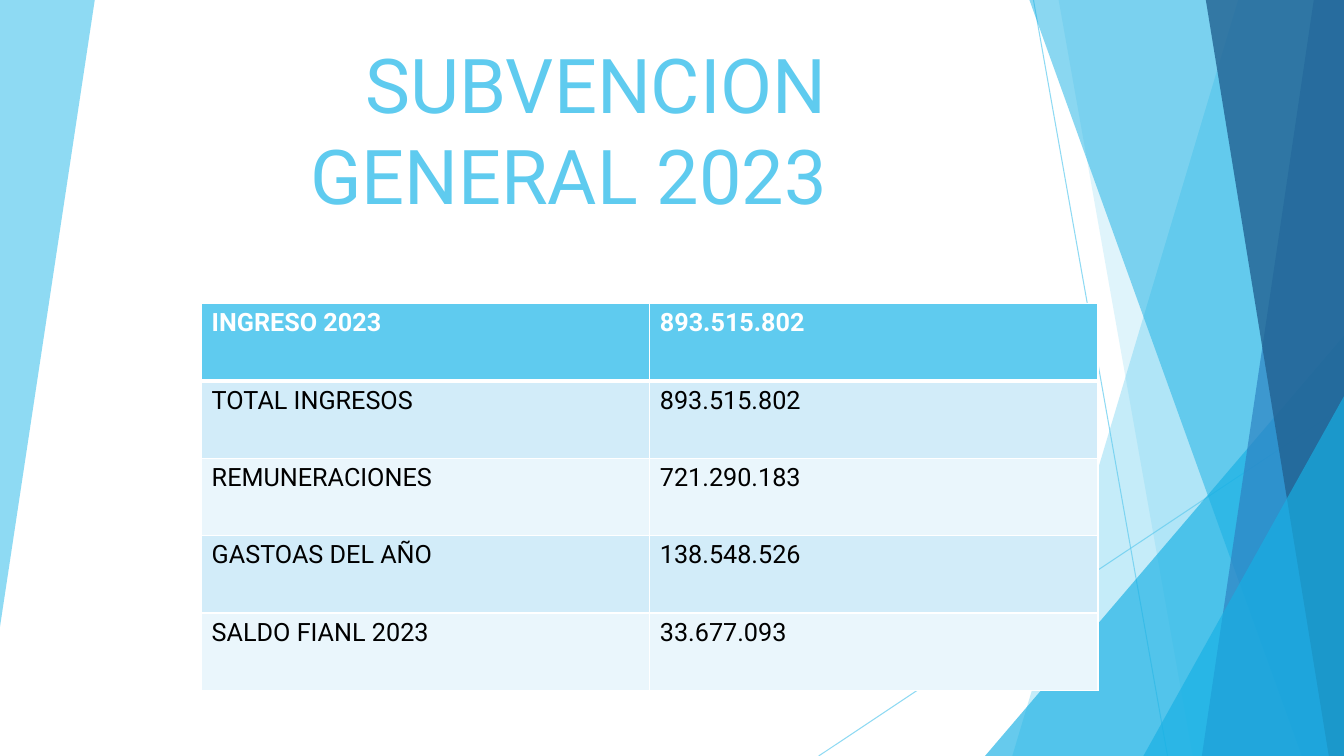
from lxml.etree import SubElement
from pptx import Presentation
from pptx.dml.color import RGBColor
from pptx.enum.shapes import MSO_CONNECTOR, MSO_SHAPE
from pptx.enum.text import MSO_ANCHOR, PP_ALIGN
from pptx.oxml.ns import qn
from pptx.util import Inches, Pt

WIDTH, HEIGHT = 13.33, 7.5
COLOURS = {
    "sky": "5FCBEF", "cyan": "17B0E4", "blue": "2E83C3", "navy": "226292",
    "band": "D2ECF9", "pale": "EAF6FC", "white": "FFFFFF", "black": "000000",
}
ROWS = [
    ("INGRESO 2023", "893.515.802"),
    ("TOTAL INGRESOS", "893.515.802"),
    ("REMUNERACIONES", "721.290.183"),
    ("GASTOAS DEL AÑO", "138.548.526"),
    ("SALDO FIANL 2023", "33.677.093"),
]


def colour(name):
    """Return the palette colour with the given name."""
    return RGBColor.from_string(COLOURS[name])


def set_format(target, values):
    """Set each attribute of the target from a dict of values."""
    for name, value in values.items():
        setattr(target, name, value)


def set_alpha(element, percent):
    """Make the first solid colour in the element partly transparent."""
    solid = next(element.iter(qn("a:srgbClr")))
    SubElement(solid, qn("a:alpha"), val=str(percent * 1000))


def paint(shape, fill, percent):
    """Give a shape a transparent fill without outline or shadow."""
    shape.shadow.inherit = False
    shape.fill.solid()
    shape.fill.fore_color.rgb = colour(fill)
    shape.line.fill.background()
    set_alpha(shape.fill._xPr, percent)


def add_facet(slide, points, fill, percent):
    """Draw a closed polygon through points given in inches."""
    corners = [(Inches(x), Inches(y)) for x, y in points]
    builder = slide.shapes.build_freeform(*corners[0])
    builder.add_line_segments(corners[1:], close=True)
    paint(builder.convert_to_shape(), fill, percent)


def add_ray(slide, start, end):
    """Draw a thin transparent line between two points in inches."""
    ends = [Inches(value) for value in (*start, *end)]
    connector = slide.shapes.add_connector(MSO_CONNECTOR.STRAIGHT, *ends)
    set_format(connector.line, {"width": Pt(0.75)})
    connector.line.color.rgb = colour("sky")
    properties = connector._element.spPr
    set_alpha(properties, 70)
    SubElement(properties, qn("a:effectLst"))


def add_backdrop(slide, left, top, width, height):
    """Draw the side facets and rays across the given box."""
    right, bottom = left + width, top + height

    def add_band(top_inset, bottom_inset, fill, percent):
        """Draw a facet from a slanted edge to the right side of the box."""
        points = [(right - top_inset, top), (right, top),
                  (right, bottom), (right - bottom_inset, bottom)]
        add_facet(slide, points, fill, percent)

    def add_corner(corner_width, corner_height):
        """Draw a triangle in the lower right corner of the box."""
        box = (right - corner_width, bottom - corner_height, corner_width, corner_height)
        triangle = slide.shapes.add_shape(
            MSO_SHAPE.ISOSCELES_TRIANGLE, *map(Inches, box))
        triangle.adjustments[0] = 1
        paint(triangle, "cyan", 66)

    add_facet(slide, [(left, top), (left + 0.94, top), (left, top + 6.22)], "sky", 70)
    add_ray(slide, (right - 3.08, top), (right - 1.75, bottom))
    add_ray(slide, (right, bottom - 3.47), (right - 5.21, bottom))
    add_band(1.05, 3.29, "sky", 36)
    add_band(2.83, 1.5, "sky", 20)
    add_corner(3.56, 4.17)
    add_band(3.12, 0.42, "cyan", 50)
    add_band(0.3, 1.41, "blue", 70)
    add_band(1.37, 0.15, "navy", 80)
    add_corner(1.99, 3.57)


def add_run(paragraph, text, size, fill, bold=False):
    """Add a formatted run to a paragraph."""
    run = paragraph.add_run()
    run.text = text
    set_format(run.font, {"name": "Roboto", "size": Pt(size), "bold": bold})
    run.font.color.rgb = colour(fill)


def add_title(slide, left, top, width, height):
    """Place the right-aligned title at the bottom of its box."""
    box = slide.shapes.add_textbox(*map(Inches, (left, top, width, height)))
    set_format(box.text_frame, {"word_wrap": True, "vertical_anchor": MSO_ANCHOR.BOTTOM})
    paragraph = box.text_frame.paragraphs[0]
    paragraph.alignment = PP_ALIGN.RIGHT
    add_run(paragraph, "SUBVENCION GENERAL 2023", 54, "sky")


def add_borders(cell, widths):
    """Add white borders to a cell from a dict of side and point width."""
    properties = cell._tc.get_or_add_tcPr()
    for side, points in widths.items():
        line = SubElement(properties, qn(f"a:ln{side}"), w=str(Pt(points)))
        solid = SubElement(line, qn("a:solidFill"))
        SubElement(solid, qn("a:srgbClr"), val=COLOURS["white"])


def add_budget_table(slide, left, top, width, height):
    """Fill the box with the income and spending table."""
    box = map(Inches, (left, top, width, height))
    table = slide.shapes.add_table(len(ROWS), len(ROWS[0]), *box).table
    for row_index, texts in enumerate(ROWS):
        header = row_index == 0
        fill = "sky" if header else ("pale", "band")[row_index % 2]
        widths = {"L": 1, "R": 1, "T": 3 if row_index == 1 else 1, "B": 3 if header else 1}
        for column_index, text in enumerate(texts):
            cell = table.cell(row_index, column_index)
            add_borders(cell, widths)
            cell.fill.solid()
            cell.fill.fore_color.rgb = colour(fill)
            add_run(cell.text_frame.paragraphs[0], text, 18,
                    "white" if header else "black", header)


def main():
    """Build the slide and save the presentation."""
    presentation = Presentation()
    set_format(presentation, {"slide_width": Inches(WIDTH), "slide_height": Inches(HEIGHT)})
    slide = presentation.slides.add_slide(presentation.slide_layouts[6])
    add_backdrop(slide, 0, 0, WIDTH, HEIGHT)
    add_title(slide, 1.13, 1.2, 7.17, 1.03)
    add_budget_table(slide, 2, 3.01, 8.89, 3.84)
    presentation.save("out.pptx")


if __name__ == "__main__":
    main()
